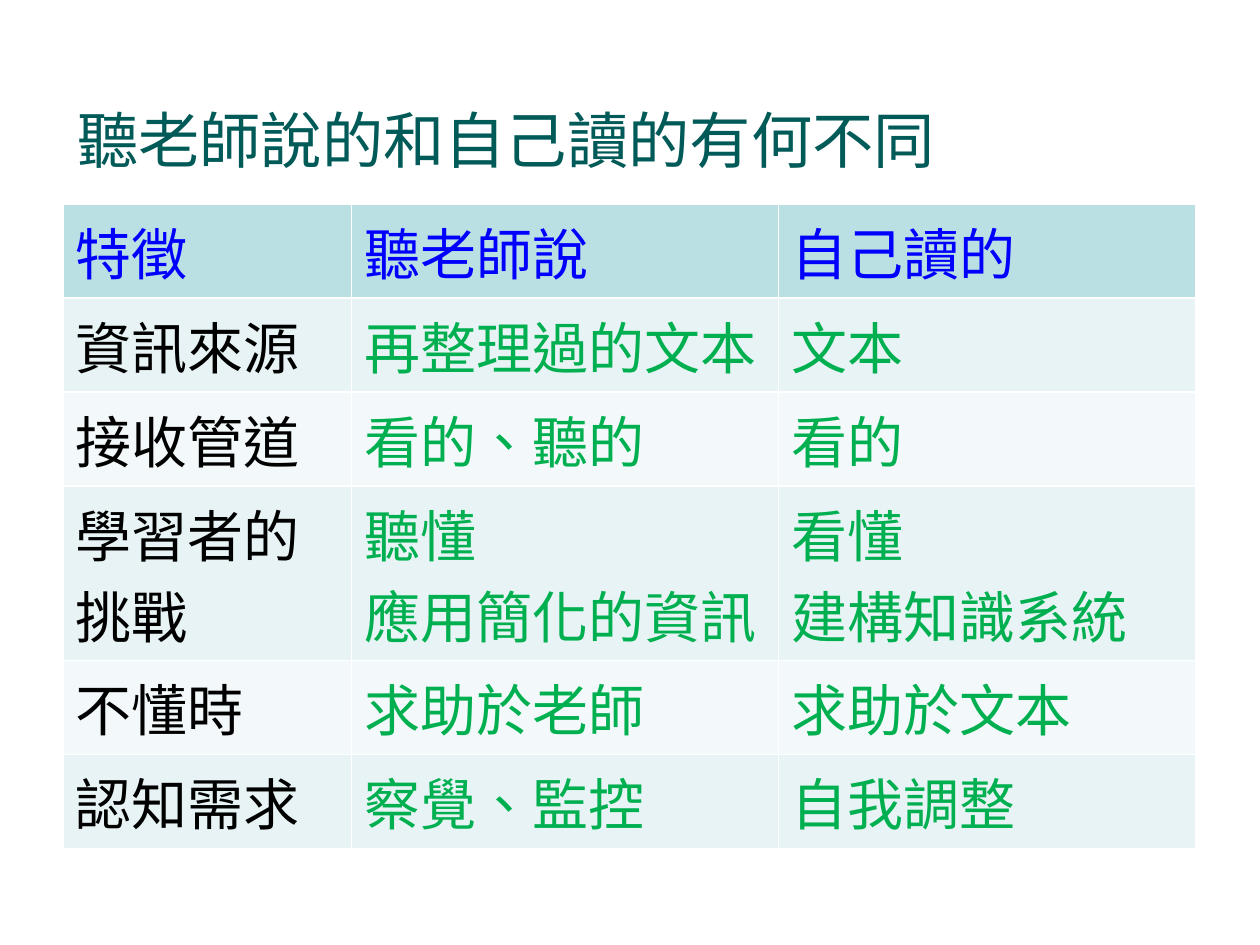
import pptx
import pptx.dml.color
import pptx.enum.lang
import pptx.enum.text
import pptx.oxml
import pptx.oxml.ns
import pptx.util
from dataclasses import dataclass

Pt = pptx.util.Pt


@dataclass(frozen=True)
class Theme:
    font: str = "Arial"
    title_size: float = 35
    table_size: float = 32
    title: str = "005A58"
    header: str = "0000FF"
    feature: str = "000000"
    answer: str = "00B050"
    header_fill: str = "BBE0E3"
    bands: tuple = ("E7F3F4", "F3F9FA")
    border: str = "FFFFFF"
    border_width: float = 1


class SlideBuilder:
    def __init__(self, slide, theme):
        self.slide = slide
        self.theme = theme

    def style_text(self, frame, text, size, color):
        frame.text = text
        for paragraph in frame.paragraphs:
            font = paragraph.font
            font.name = self.theme.font
            font.size = Pt(size)
            font.bold = False
            font.color.rgb = pptx.dml.color.RGBColor.from_string(color)
            # The language selects the regional form of the punctuation
            for run in paragraph.runs:
                run.font.language_id = (
                    pptx.enum.lang.MSO_LANGUAGE_ID.TRADITIONAL_CHINESE)

    def add_title(self, text, left, top, width, height):
        frame = self.slide.shapes.add_textbox(
            Pt(left), Pt(top), Pt(width), Pt(height)).text_frame
        frame.word_wrap = True
        frame.vertical_anchor = pptx.enum.text.MSO_ANCHOR.MIDDLE
        self.style_text(frame, text, self.theme.title_size, self.theme.title)

    def add_borders(self, cell):
        # Border lines come before the fill in the cell properties
        properties = cell._tc.get_or_add_tcPr()
        for position, side in enumerate("LRTB"):
            line = pptx.oxml.parse_xml(
                f'<a:ln{side} {pptx.oxml.ns.nsdecls("a")} '
                f'w="{Pt(self.theme.border_width)}"><a:solidFill>'
                f'<a:srgbClr val="{self.theme.border}"/>'
                f'</a:solidFill></a:ln{side}>')
            properties.insert(position, line)

    def cell_colors(self, row, column):
        theme = self.theme
        if row == 0:
            return theme.header, theme.header_fill
        text_color = theme.feature if column == 0 else theme.answer
        return text_color, theme.bands[(row - 1) % 2]

    def add_table(self, rows, left, top, widths, heights):
        table = self.slide.shapes.add_table(
            len(rows), len(widths), Pt(left), Pt(top),
            Pt(sum(widths)), Pt(sum(heights))).table
        for column, width in zip(table.columns, widths):
            column.width = Pt(width)
        for row, height in zip(table.rows, heights):
            row.height = Pt(height)
        for r, texts in enumerate(rows):
            for c, text in enumerate(texts):
                cell = table.cell(r, c)
                text_color, fill_color = self.cell_colors(r, c)
                self.style_text(cell.text_frame, text,
                                self.theme.table_size, text_color)
                cell.fill.solid()
                cell.fill.fore_color.rgb = (
                    pptx.dml.color.RGBColor.from_string(fill_color))
                self.add_borders(cell)


COMPARISON = [
    ("特徵", "聽老師說", "自己讀的"),
    ("資訊來源", "再整理過的文本", "文本"),
    ("接收管道", "看的、聽的", "看的"),
    ("學習者的挑戰", "聽懂\n應用簡化的資訊", "看懂\n建構知識系統"),
    ("不懂時", "求助於老師", "求助於文本"),
    ("認知需求", "察覺、監控", "自我調整"),
]
ONE_LINE, TWO_LINES = 53.7, 99.8


def main():
    presentation = pptx.Presentation()
    presentation.slide_width = Pt(720)
    presentation.slide_height = Pt(540)
    slide = presentation.slides.add_slide(presentation.slide_layouts[6])
    builder = SlideBuilder(slide, Theme())

    # Title
    builder.add_title("聽老師說的和自己讀的有何不同", 37, 54.5, 648, 50)

    # Comparison of listening and reading
    heights = [TWO_LINES if any("\n" in text for text in texts) else ONE_LINE
               for texts in COMPARISON]
    builder.add_table(COMPARISON, 36, 116.6, (165, 244, 238.5), heights)

    presentation.save("out.pptx")


if __name__ == "__main__":
    main()
